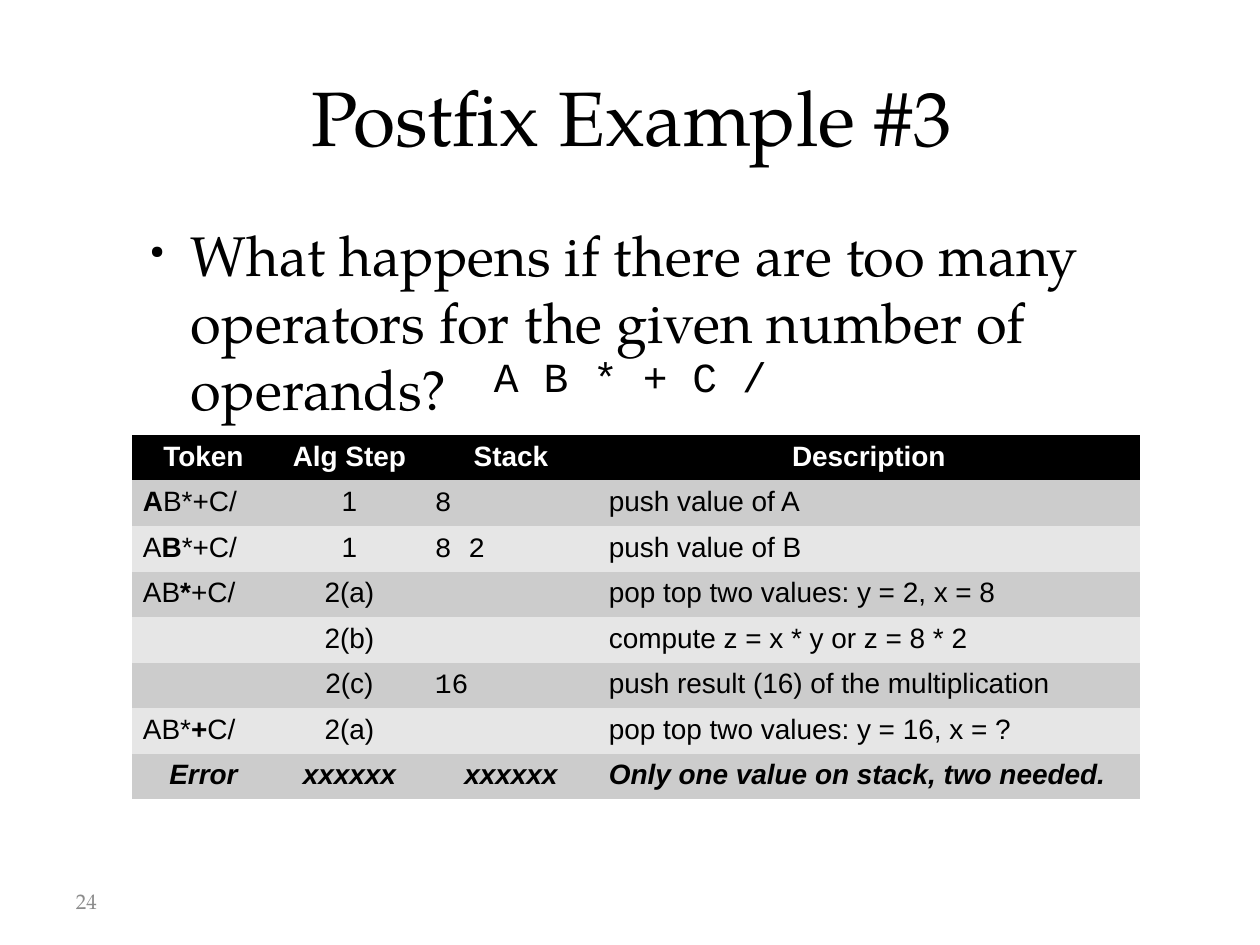
from dataclasses import dataclass

from pptx import Presentation
from pptx.dml.color import RGBColor
from pptx.enum.text import MSO_ANCHOR, PP_ALIGN
from pptx.oxml.ns import qn
from pptx.util import Emu, Pt

EMU_PER_PX = 914400 // 126
PLAIN_TABLE_STYLE = "{2D5ABB26-0587-4C30-8999-92F81FD0307C}"


@dataclass(frozen=True)
class Theme:
    """Fonts, type sizes and colours of the slide."""
    serif: str = "TeX Gyre Pagella"
    sans: str = "Arial"
    mono: str = "Courier New"
    title_size: float = 44
    body_size: float = 32
    code_size: float = 23.6
    table_size: float = 16
    number_size: float = 12
    ink: str = "000000"
    white: str = "FFFFFF"
    muted: str = "8C8C8C"
    bands: tuple = ("CCCCCC", "E6E6E6")


THEME = Theme()
COLUMN_WIDTHS = (143, 149, 174, 542)
HEADINGS = ("Token", "Alg Step", "Stack", "Description")
STEPS = (
    (("", "A", "B*+C/"), "1", "8", "push value of A"),
    (("A", "B", "*+C/"), "1", "8 2", "push value of B"),
    (("AB", "*", "+C/"), "2(a)", "", "pop top two values: y = 2, x = 8"),
    ((), "2(b)", "", "compute z = x * y or z = 8 * 2"),
    ((), "2(c)", "16", "push result (16) of the multiplication"),
    (("AB*", "+", "C/"), "2(a)", "", "pop top two values: y = 16, x = ?"),
)
ERROR_ROW = ("Error", "xxxxxx", "xxxxxx", "Only one value on stack, two needed.")


def px(length):
    """Turn whole pixels into EMU."""
    return Emu(length * EMU_PER_PX)


def style_font(font, name, size, color, bold=False, italic=False):
    """Set the look of a font."""
    font.name, font.size = name, Pt(size)
    font.bold, font.italic = bold, italic
    font.color.rgb = RGBColor.from_string(color)


def set_margins(target, left, top, right, bottom):
    """Set the inner margins of a text frame or a cell."""
    target.margin_left, target.margin_top = px(left), px(top)
    target.margin_right, target.margin_bottom = px(right), px(bottom)


def add_text(slide, box, text, font, size, color=THEME.ink,
             anchor=MSO_ANCHOR.MIDDLE, margins=(13, 6, 13, 6), wrap=True):
    """Add a one-paragraph text box and return its paragraph."""
    frame = slide.shapes.add_textbox(*map(px, box)).text_frame
    frame.word_wrap = wrap
    frame.vertical_anchor = anchor
    set_margins(frame, *margins)
    paragraph = frame.paragraphs[0]
    paragraph.text = text
    style_font(paragraph.font, font, size, color)
    return paragraph


def add_bullet(paragraph, indent, hanging):
    """Give a paragraph a small round bullet."""
    properties = paragraph._p.get_or_add_pPr()
    properties.set("marL", str(px(indent)))
    properties.set("indent", str(-px(hanging)))
    size = properties.makeelement(qn("a:buSzPct"), {"val": "32000"})
    bullet = properties.makeelement(qn("a:buChar"), {"char": "●"})
    position = properties.index(properties.find(qn("a:defRPr")))
    properties[position:position] = [size, bullet]


def fill_cell(cell, parts, fill, font=THEME.sans, color=THEME.ink,
              centered=False, bold=False, italic=False):
    """Fill a cell and write its parts, the middle one of several in bold."""
    cell.fill.solid()
    cell.fill.fore_color.rgb = RGBColor.from_string(fill)
    if not any(parts):
        set_margins(cell, 11, 2, 11, 2)
        return
    set_margins(cell, 11, 8, 11, 6)
    paragraph = cell.text_frame.paragraphs[0]
    paragraph.alignment = PP_ALIGN.CENTER if centered else PP_ALIGN.LEFT
    paragraph.line_spacing = 0.94 if font == THEME.mono else 0.93
    style_font(paragraph.font, font, THEME.table_size, color, bold, italic)
    for index, part in enumerate(parts):
        if part:
            run = paragraph.add_run()
            run.text = part
            run.font.bold = bold or index == 1


def add_trace_table(slide):
    """Add the table that traces the evaluation."""
    row_count = len(STEPS) + 2
    frame = slide.shapes.add_table(row_count, len(HEADINGS), px(132), px(435),
                                   px(sum(COLUMN_WIDTHS)), px(364))
    table = frame.table
    table._tbl.tblPr.find(qn("a:tableStyleId")).text = PLAIN_TABLE_STYLE
    for column, width in zip(table.columns, COLUMN_WIDTHS):
        column.width = px(width)
    for column, heading in enumerate(HEADINGS):
        fill_cell(table.cell(0, column), [heading], THEME.ink,
                  color=THEME.white, centered=True, bold=True)
    for row, (token, step, stack, description) in enumerate(STEPS, 1):
        fill = THEME.bands[(row - 1) % 2]
        fill_cell(table.cell(row, 0), token, fill)
        fill_cell(table.cell(row, 1), [step], fill, centered=True)
        fill_cell(table.cell(row, 2), [stack], fill, font=THEME.mono)
        fill_cell(table.cell(row, 3), [description], fill)
    last = row_count - 1
    for column, text in enumerate(ERROR_ROW):
        fill_cell(table.cell(last, column), [text], THEME.bands[(last - 1) % 2],
                  centered=column < 3, bold=True, italic=True)


def main():
    """Build and save the slide."""
    presentation = Presentation()
    presentation.slide_width, presentation.slide_height = px(1260), px(945)
    slide = presentation.slides.add_slide(presentation.slide_layouts[6])
    add_text(slide, (63, 876, 294, 50), "24", THEME.serif, THEME.number_size,
             THEME.muted)
    title = add_text(slide, (63, 38, 1138, 158), "Postfix Example #3",
                     THEME.serif, THEME.title_size, margins=(13, 4, 13, 6))
    title.alignment = PP_ALIGN.CENTER
    add_trace_table(slide)
    question = add_text(
        slide, (123, 214, 1056, 624),
        "What happens if there are too many operators for the given number "
        "of operands?", THEME.serif, THEME.body_size, anchor=MSO_ANCHOR.TOP)
    question.space_before = Pt(6)
    add_bullet(question, 55, 41)
    expression = add_text(slide, (494, 354, 280, 47), "A B * + C /", THEME.mono,
                          THEME.code_size, margins=(0, 3, 0, 0), wrap=False)
    expression.line_spacing = 0.94
    presentation.save("out.pptx")


if __name__ == "__main__":
    main()
